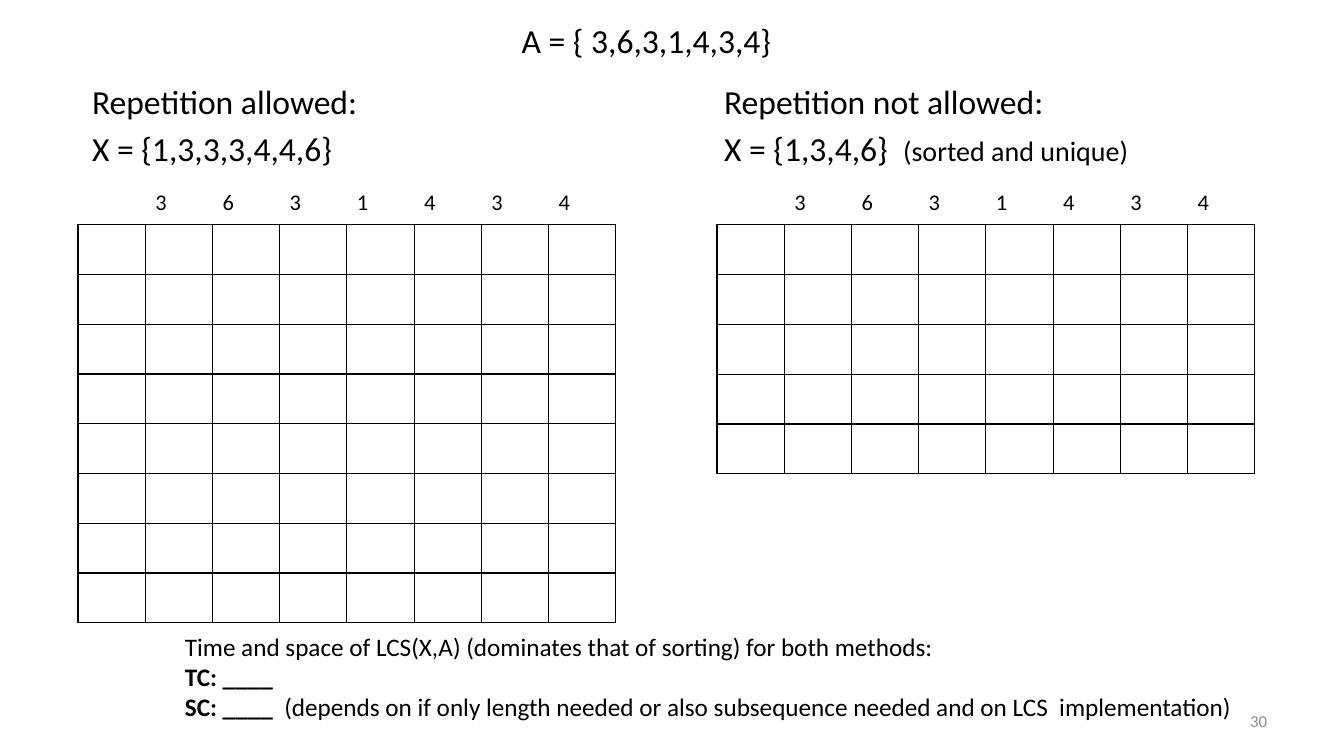
"""Build a slide of blank LCS grids for longest increasing subsequence, with and without repetition."""
from dataclasses import dataclass

from lxml.etree import SubElement
from pptx import Presentation
from pptx.dml.color import RGBColor
from pptx.enum.text import MSO_ANCHOR, MSO_AUTO_SIZE, PP_ALIGN
from pptx.oxml.ns import qn
from pptx.util import Emu, Pt

EMU_PER_PX = 914400 / 100.8
FONT = "Calibri"
COLORS = {"ink": "000000", "number": "8C8C8C"}
SEQUENCE = "3631434"
EDGES = "LRTB"


@dataclass(frozen=True)
class Span:
    text: str
    size: int
    bold: bool = False
    color: str = "ink"


@dataclass(frozen=True)
class Box:
    left: int
    top: int
    width: int
    height: int


@dataclass(frozen=True)
class Grid:
    left: int
    top: int
    label_width: int
    header_height: int
    width: int
    height: int
    rows: int


TITLE_BOX = Box(82, 11, 1129, 59)
TITLE = [[Span("A = { 3,6,3,1,4,3,4}", 24)]]
LISTS = {
    1: (Box(82, 76, 541, 118), [
        [Span("Repetition allowed:", 24)],
        [Span("X = {1,3,3,3,4,4,6}", 24)],
    ]),
    2: (Box(714, 76, 541, 118), [
        [Span("Repetition not allowed:", 24)],
        [Span("X = {1,3,4,6}  ", 24), Span("(sorted and unique)", 20)],
    ]),
}
GRIDS = [
    Grid(42, 184, 36, 37, 538, 398, 8),
    Grid(688, 184, 29, 37, 538, 249, 5),
]
COST_BOX = Box(175, 626, 1090, 102)
COSTS = [
    [Span("Time and space of LCS(X,A) (dominates that of sorting) for both methods:", 18)],
    [Span("TC: ____", 18, True)],
    [Span("SC: ____  ", 18, True),
     Span("(depends on if only length needed or also subsequence needed "
          "and on LCS  implementation)", 18)],
]
NUMBER_BOX = Box(964, 701, 313, 40)
NUMBER = [[Span("30", 12, color="number")]]


def px(length: int) -> Emu:
    """Turn pixels into EMU."""
    return Emu(round(length * EMU_PER_PX))


def place(shape, box: Box) -> None:
    """Move and size a shape."""
    shape.left, shape.top = px(box.left), px(box.top)
    shape.width, shape.height = px(box.width), px(box.height)


def write(frame, lines: list[list[Span]], align: PP_ALIGN = PP_ALIGN.LEFT) -> None:
    """Fill a text frame run by run."""
    frame.auto_size = MSO_AUTO_SIZE.NONE
    for index, line in enumerate(lines):
        para = frame.paragraphs[0] if index == 0 else frame.add_paragraph()
        para.alignment = align
        for span in line:
            run = para.add_run()
            run.text = span.text
            run.font.name = FONT
            run.font.size = Pt(span.size)
            run.font.bold = span.bold
            run.font.color.rgb = RGBColor.from_string(COLORS[span.color])


def remove_bullets(frame) -> None:
    """Set the paragraphs flush left without bullets."""
    for para in frame.paragraphs:
        properties = para._p.get_or_add_pPr()
        properties.set("marL", "0")
        properties.set("indent", "0")
        SubElement(properties, qn("a:buNone"))


def add_text(page, box: Box, lines: list[list[Span]], align: PP_ALIGN, wrap: bool):
    """Add a text box and return its frame."""
    shape = page.shapes.add_textbox(0, 0, 0, 0)
    place(shape, box)
    write(shape.text_frame, lines, align)
    shape.text_frame.word_wrap = wrap
    return shape.text_frame


def visible_edges(row: int, column: int) -> str:
    """Name the ruled edges of a cell."""
    if row and column:
        return EDGES
    if row:
        return "R"
    return "B" if column else ""


def set_borders(cell, visible: str) -> None:
    """Clear the fill of a cell and rule its visible edges."""
    properties = cell._tc.get_or_add_tcPr()
    for edge in EDGES:
        line = SubElement(properties, qn(f"a:ln{edge}"), w=str(Pt(1)))
        if edge in visible:
            fill = SubElement(line, qn("a:solidFill"))
            SubElement(fill, qn("a:srgbClr"), val=COLORS["ink"])
        else:
            SubElement(line, qn("a:noFill"))
    cell.fill.background()


def add_grid(page, grid: Grid) -> None:
    """Add a blank LCS table headed by the sequence."""
    columns = len(SEQUENCE) + 1
    table = page.shapes.add_table(
        grid.rows + 1, columns + 1, px(grid.left), px(grid.top),
        px(grid.label_width + grid.width), px(grid.header_height + grid.height),
    ).table
    table.first_row = table.horz_banding = False
    for index, column in enumerate(table.columns):
        column.width = Emu(px(grid.width) // columns) if index else px(grid.label_width)
    for index, row in enumerate(table.rows):
        row.height = Emu(px(grid.height) // grid.rows) if index else px(grid.header_height)
        for position, cell in enumerate(row.cells):
            set_borders(cell, visible_edges(index, position))
    for position, value in enumerate(SEQUENCE, start=2):
        write(table.cell(0, position).text_frame, [[Span(value, 16)]])


def main() -> None:
    """Build and save the deck."""
    deck = Presentation()
    deck.slide_width, deck.slide_height = px(1344), px(756)
    page = deck.slides.add_slide(deck.slide_layouts[3])
    place(page.shapes.title, TITLE_BOX)
    write(page.shapes.title.text_frame, TITLE, PP_ALIGN.CENTER)
    for index, (box, lines) in LISTS.items():
        body = page.placeholders[index]
        place(body, box)
        write(body.text_frame, lines)
        remove_bullets(body.text_frame)
    number = add_text(page, NUMBER_BOX, NUMBER, PP_ALIGN.RIGHT, wrap=True)
    number.vertical_anchor = MSO_ANCHOR.MIDDLE
    for grid in GRIDS:
        add_grid(page, grid)
    add_text(page, COST_BOX, COSTS, PP_ALIGN.LEFT, wrap=False)
    deck.save("out.pptx")


if __name__ == "__main__":
    main()
